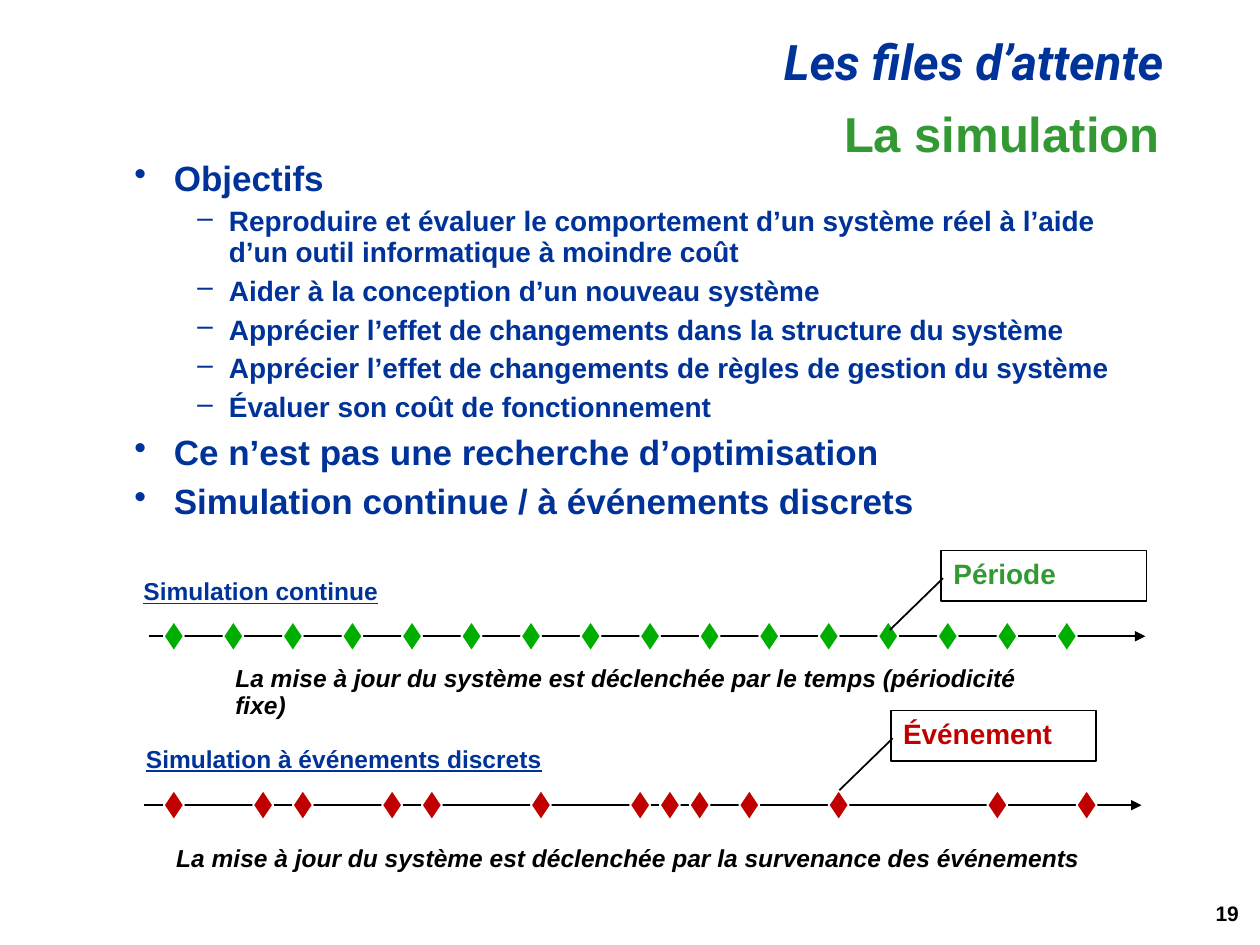
from dataclasses import dataclass

from lxml.etree import SubElement
from pptx import Presentation
from pptx.dml.color import RGBColor as RGB
from pptx.enum.shapes import MSO_CONNECTOR as CONN, MSO_SHAPE as SHAPE
from pptx.enum.text import MSO_ANCHOR as ANCHOR, PP_ALIGN as ALIGN
from pptx.oxml.ns import qn
from pptx.util import Pt

COLORS = {
    "navy": "003399",
    "green": "339933",
    "bright_green": "00AE00",
    "red": "C00000",
    "black": "000000",
    "white": "FFFFFF",
}
TICK = 5.67  # time unit along both axes
FIRST_X = 93.6
DIAMOND_W, DIAMOND_H = 11.5, 17.3


@dataclass(frozen=True)
class Bullet:
    text: str
    level: int = 0


@dataclass(frozen=True)
class BulletStyle:
    char: str
    size: float
    margin: float
    hanging: float
    before: float


@dataclass(frozen=True)
class Callout:
    text: str
    x: float
    y: float
    color: str


@dataclass(frozen=True)
class Label:
    text: str
    x: float
    y: float
    w: float
    wrap: bool = False


@dataclass(frozen=True)
class Timeline:
    x1: float
    x2: float
    y: float
    color: str
    ticks: tuple[int, ...]
    heading: Label
    caption: Label
    callout: Callout


BULLET_STYLES = (
    BulletStyle("•", 20, 22.5, 22.5, 6.5),
    BulletStyle("–", 16, 54, 18, 5),
)
BULLETS = (
    Bullet("Objectifs"),
    Bullet("Reproduire et évaluer le comportement d’un système réel à l’aide "
           "d’un outil informatique à moindre coût", 1),
    Bullet("Aider à la conception d’un nouveau système", 1),
    Bullet("Apprécier l’effet de changements dans la structure du système", 1),
    Bullet("Apprécier l’effet de changements de règles de gestion du système", 1),
    Bullet("Évaluer son coût de fonctionnement", 1),
    Bullet("Ce n’est pas une recherche d’optimisation"),
    Bullet("Simulation continue / à événements discrets"),
)
TIMELINES = (
    Timeline(
        85, 654.5, 363.6, "bright_green", tuple(range(0, 96, 6)),
        Label("Simulation continue", 74.9, 327.6, 149),
        Label("La mise à jour du système est déclenchée par le temps "
              "(périodicité fixe)", 127.4, 377.3, 490.3, True),
        Callout("Période", 537.8, 314.6, "green"),
    ),
    Timeline(
        82.1, 652.3, 460.1, "red",
        (0, 9, 13, 22, 26, 37, 47, 50, 53, 58, 67, 83, 92),
        Label("Simulation à événements discrets", 76.3, 423.4, 242),
        Label("La mise à jour du système est déclenchée par la survenance "
              "des événements", 93.6, 480.2, 540.7),
        Callout("Événement", 509, 406.1, "red"),
    ),
)


def rgb(name: str) -> RGB:
    return RGB.from_string(COLORS[name])


def write(p, text: str, *, size: float, color: str = "black",
          font: str = "Arial", bold: bool = True, italic: bool = False,
          underline: bool = False, align=ALIGN.LEFT, spacing: float = 0.9):
    p.alignment = align
    p.line_spacing = spacing
    r = p.add_run()
    r.text = text
    f = r.font
    f.name, f.size, f.bold, f.italic = font, Pt(size), bold, italic
    f.underline = underline
    f.color.rgb = rgb(color)


def add_box(slide, x: float, y: float, w: float, h: float,
            wrap: bool = True, anchor=ANCHOR.TOP):
    tf = slide.shapes.add_textbox(Pt(x), Pt(y), Pt(w), Pt(h)).text_frame
    tf.word_wrap = wrap
    tf.vertical_anchor = anchor
    return tf


def add_bullets(slide, bullets: tuple[Bullet, ...]):
    tf = add_box(slide, 69.8, 88.6, 585.4, 238.3)
    for i, bullet in enumerate(bullets):
        style = BULLET_STYLES[bullet.level]
        p = tf.add_paragraph() if i else tf.paragraphs[0]
        p.level = bullet.level
        write(p, bullet.text, size=style.size, color="navy")
        p.space_before = Pt(style.before)
        props = p._p.get_or_add_pPr()
        props.set("marL", str(Pt(style.margin)))
        props.set("indent", str(-Pt(style.hanging)))
        SubElement(props, qn("a:buChar"), char=style.char)


def add_arrow(slide, x1: float, x2: float, y: float):
    line = slide.shapes.add_connector(CONN.STRAIGHT, Pt(x1), Pt(y), Pt(x2), Pt(y))
    line.line.color.rgb = rgb("black")
    line.line.width = Pt(1)
    SubElement(line.line._get_or_add_ln(), qn("a:tailEnd"), type="triangle")
    SubElement(line._element.spPr, qn("a:effectLst"))


def add_shape(slide, kind, x: float, y: float, w: float, h: float, line: str):
    sp = slide.shapes.add_shape(kind, Pt(x), Pt(y), Pt(w), Pt(h))
    sp.shadow.inherit = False
    sp.line.color.rgb = rgb(line)
    sp.line.width = Pt(1)
    return sp


def add_callout(slide, callout: Callout):
    sp = add_shape(slide, SHAPE.LINE_CALLOUT_1, callout.x, callout.y,
                   117.4, 28.8, "black")
    sp.fill.background()
    for i, value in enumerate((0.55, 0.01, 1.58, -0.25)):
        sp.adjustments[i] = value
    sp.text_frame.vertical_anchor = ANCHOR.MIDDLE
    write(sp.text_frame.paragraphs[0], callout.text, size=16, color=callout.color)


def add_label(slide, label: Label, **style):
    tf = add_box(slide, label.x, label.y, label.w, 22.3, label.wrap)
    write(tf.paragraphs[0], label.text, size=14, **style)


def add_timeline(slide, timeline: Timeline):
    add_arrow(slide, timeline.x1, timeline.x2, timeline.y)
    for tick in timeline.ticks:
        sp = add_shape(slide, SHAPE.DIAMOND, FIRST_X + tick * TICK,
                       timeline.y - DIAMOND_H / 2, DIAMOND_W, DIAMOND_H, "white")
        sp.fill.solid()
        sp.fill.fore_color.rgb = rgb(timeline.color)
    add_label(slide, timeline.heading, color="navy", underline=True)
    add_label(slide, timeline.caption, italic=True)
    add_callout(slide, timeline.callout)


def main():
    prs = Presentation()
    prs.slide_width, prs.slide_height = Pt(720), Pt(540)
    slide = prs.slides.add_slide(prs.slide_layouts[6])

    course = add_box(slide, 90, 18, 581.8, 37.4)
    write(course.paragraphs[0], "Les files d’attente", size=28, color="navy",
          font="Roboto", italic=True, align=ALIGN.RIGHT)
    title = add_box(slide, 99.4, 59.8, 570.2, 36, anchor=ANCHOR.MIDDLE)
    write(title.paragraphs[0], "La simulation", size=28, color="green",
          align=ALIGN.RIGHT)
    add_bullets(slide, BULLETS)
    number = add_box(slide, 553, 507.6, 162, 28.8, anchor=ANCHOR.MIDDLE)
    write(number.paragraphs[0], "19", size=12, align=ALIGN.RIGHT, spacing=1.0)
    for timeline in TIMELINES:
        add_timeline(slide, timeline)

    prs.save("out.pptx")


if __name__ == "__main__":
    main()
